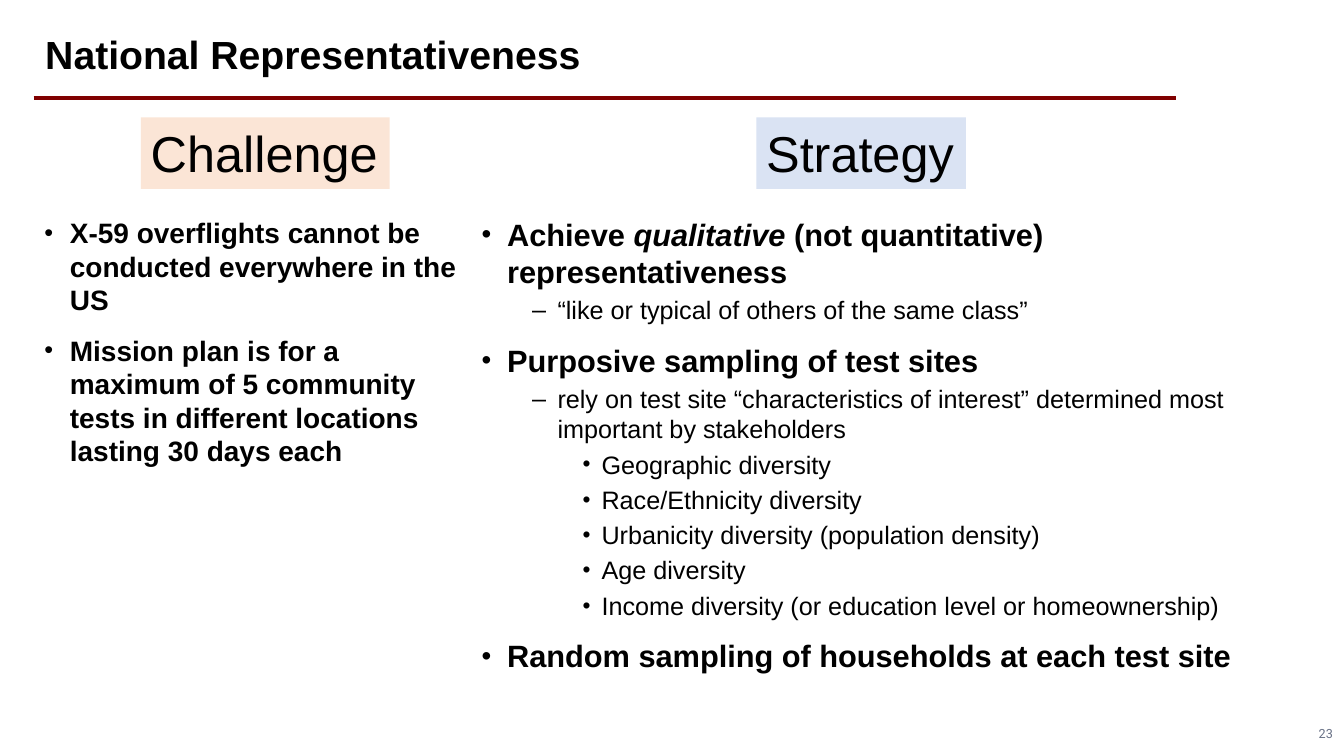
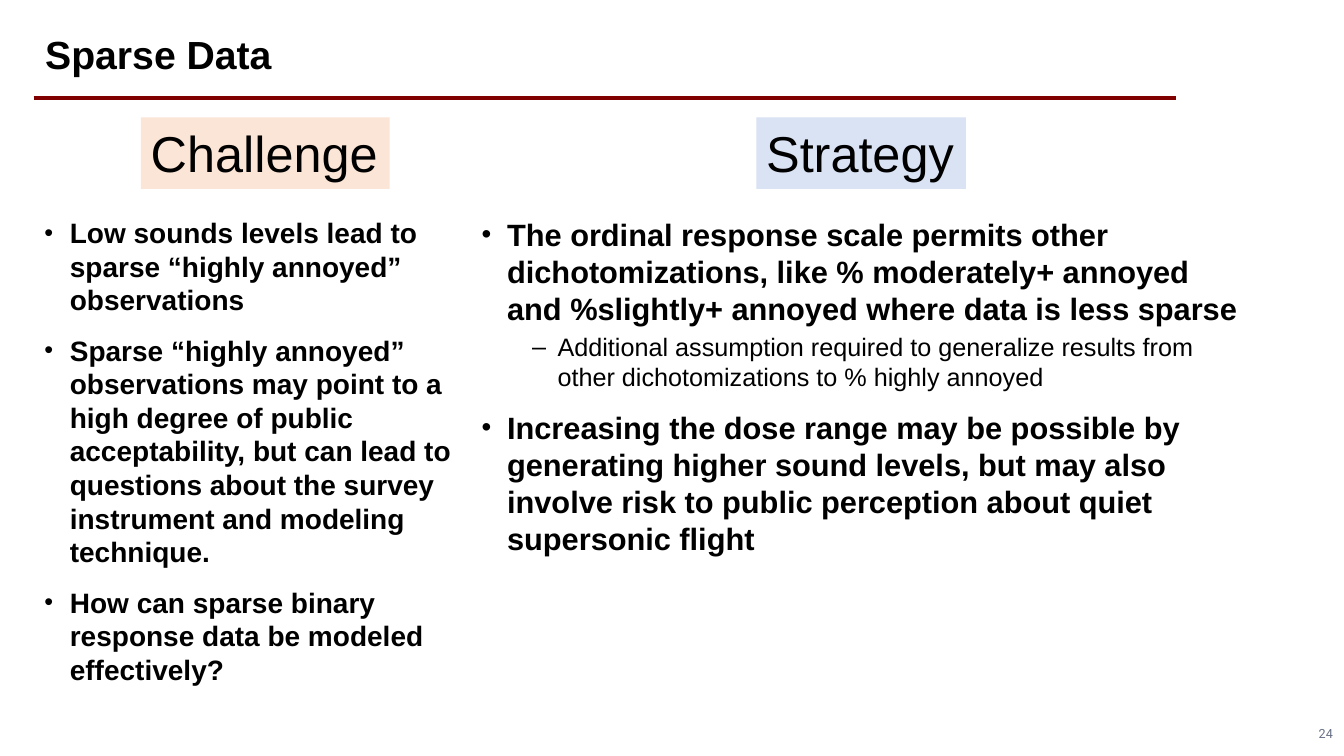
"""Build two challenge-and-strategy slides on survey design."""
from dataclasses import dataclass

from lxml import etree
from pptx import Presentation
from pptx.dml.color import RGBColor
from pptx.enum import shapes, text
from pptx.oxml import ns
from pptx.util import Cm, Pt

COLORS = {
    "text": "000000",
    "rule": "800000",
    "challenge": "FBE5D6",
    "strategy": "DAE3F3",
    "number": "677085",
}
FONT = "Arial"
NUMBER_FONT = "Roboto"
FIRST_NUMBER = 23
LABEL_TOP, LABEL_HEIGHT = 2.96, 1.8
BODY_TOP, BODY_HEIGHT = 5.28, 12.47


@dataclass(frozen=True)
class Level:
    """Paragraph style of one list level, with indents in centimetres."""
    bullet: str
    bullet_percent: int
    margin: float
    hanging: float
    space_before: float
    bold: bool


@dataclass(frozen=True)
class Column:
    """A labelled list column, with lengths in centimetres."""
    label: str
    color: str
    label_left: float
    label_width: float
    body_left: float
    body_width: float
    sizes: tuple[int, ...]


@dataclass(frozen=True)
class Item:
    """A list entry; asterisks enclose italic words."""
    text: str
    level: int = 0


@dataclass(frozen=True)
class Page:
    """Content of one slide."""
    title: str
    challenge: list[Item]
    strategy: list[Item]


LEVELS = (
    Level("•", 90, 0.64, 0.64, 12, True),
    Level("–", 100, 1.91, 0.64, 3.6, False),
    Level("•", 90, 3.02, 0.48, 3.6, False),
)
CHALLENGE = Column("Challenge", "challenge", 3.55, 6.27, 0.84, 11.23, (20,))
STRATEGY = Column("Strategy", "strategy", 19.06, 5.28, 11.86, 19.69, (22, 18, 18))

PAGES = (
    Page(
        "National Representativeness",
        [
            Item("X-59 overflights cannot be conducted everywhere in the US"),
            Item("Mission plan is for a maximum of 5 community tests in different "
                 "locations lasting 30 days each"),
        ],
        [
            Item("Achieve *qualitative *(not quantitative) representativeness"),
            Item("“like or typical of others of the same class”", 1),
            Item("Purposive sampling of test sites"),
            Item("rely on test site “characteristics of interest” determined most "
                 "important by stakeholders", 1),
            Item("Geographic diversity", 2),
            Item("Race/Ethnicity diversity", 2),
            Item("Urbanicity diversity (population density)", 2),
            Item("Age diversity", 2),
            Item("Income diversity (or education level or homeownership)", 2),
            Item("Random sampling of households at each test site"),
        ],
    ),
    Page(
        "Sparse Data",
        [
            Item("Low sounds levels lead to sparse “highly annoyed” observations"),
            Item("Sparse “highly annoyed” observations may point to a high degree of "
                 "public acceptability, but can lead to questions about the survey "
                 "instrument and modeling technique."),
            Item("How can sparse binary response data be modeled effectively?"),
        ],
        [
            Item("The ordinal response scale permits other dichotomizations, like "
                 "% moderately+ annoyed and %slightly+ annoyed where data is less sparse"),
            Item("Additional assumption required to generalize results from other "
                 "dichotomizations to % highly annoyed", 1),
            Item("Increasing the dose range may be possible by generating higher sound "
                 "levels, but may also involve risk to public perception about quiet "
                 "supersonic flight"),
        ],
    ),
)


def rgb(name: str) -> RGBColor:
    """Look up a named colour."""
    return RGBColor.from_string(COLORS[name])


def set_font(paragraph, size: int, bold: bool = False,
             color: str = "text", name: str = FONT) -> None:
    """Set the font that all runs of a paragraph share."""
    font = paragraph.font
    font.name, font.size, font.bold = name, Pt(size), bold
    font.color.rgb = rgb(color)


def place(shape, left: float, top: float, width: float, height: float) -> None:
    """Position a shape by lengths in centimetres."""
    shape.left, shape.top = Cm(left), Cm(top)
    shape.width, shape.height = Cm(width), Cm(height)


def format_frame(frame, anchor: text.MSO_ANCHOR) -> None:
    """Give a text frame the common insets and fixed size."""
    frame.margin_left = frame.margin_right = Cm(0.28)
    frame.margin_top = frame.margin_bottom = Cm(0.15)
    frame.word_wrap = True
    frame.auto_size = text.MSO_AUTO_SIZE.NONE
    frame.vertical_anchor = anchor


def add_bullet(paragraph, level: Level) -> None:
    """Add the indent and bullet of a list level."""
    properties = paragraph._p.get_or_add_pPr()
    properties.set("marL", str(Cm(level.margin)))
    properties.set("indent", str(-Cm(level.hanging)))
    for tag, attribute, value in (
        ("a:buSzPct", "val", str(level.bullet_percent * 1000)),
        ("a:buFont", "typeface", FONT),
        ("a:buChar", "char", level.bullet),
    ):
        etree.SubElement(properties, ns.qn(tag)).set(attribute, value)


def fill_list(shape, items: list[Item], sizes: tuple[int, ...]) -> None:
    """Write list entries into a body placeholder."""
    frame = shape.text_frame
    format_frame(frame, text.MSO_ANCHOR.TOP)
    for index, item in enumerate(items):
        paragraph = frame.add_paragraph() if index else frame.paragraphs[0]
        level = LEVELS[item.level]
        paragraph.level = item.level
        add_bullet(paragraph, level)
        paragraph.alignment = text.PP_ALIGN.LEFT
        paragraph.space_before = Pt(level.space_before if index else 0)
        set_font(paragraph, sizes[item.level], level.bold)
        for position, part in enumerate(item.text.split("*")):
            run = paragraph.add_run()
            run.text = part
            if position % 2:
                run.font.italic = True


def add_column(slide, body, column: Column, items: list[Item]) -> None:
    """Draw a coloured label and the list below it."""
    place(body, column.body_left, BODY_TOP, column.body_width, BODY_HEIGHT)
    fill_list(body, items, column.sizes)
    label = slide.shapes.add_textbox(Cm(column.label_left), Cm(LABEL_TOP),
                                     Cm(column.label_width), Cm(LABEL_HEIGHT))
    label.fill.solid()
    label.fill.fore_color.rgb = rgb(column.color)
    frame = label.text_frame
    frame.word_wrap = False
    frame.auto_size = text.MSO_AUTO_SIZE.SHAPE_TO_FIT_TEXT
    frame.text = column.label
    set_font(frame.paragraphs[0], 36)


def add_title(slide, title: str) -> None:
    """Write the title and draw the rule under it."""
    shape = slide.shapes.title
    place(shape, 0.86, 0.48, 29.21, 1.73)
    frame = shape.text_frame
    format_frame(frame, text.MSO_ANCHOR.MIDDLE)
    frame.text = title
    paragraph = frame.paragraphs[0]
    paragraph.alignment = text.PP_ALIGN.LEFT
    set_font(paragraph, 28, bold=True)
    rule = slide.shapes.add_connector(shapes.MSO_CONNECTOR.STRAIGHT,
                                      Cm(0.85), Cm(2.47), Cm(29.64), Cm(2.47))
    rule.line.color.rgb = rgb("rule")
    rule.line.width = Pt(3)
    etree.SubElement(rule._element.spPr, ns.qn("a:effectLst"))


def add_number(slide, number: int) -> None:
    """Write the slide number in the bottom right corner."""
    box = slide.shapes.add_textbox(Cm(32.35), Cm(17.95), Cm(1.52), Cm(1.09))
    frame = box.text_frame
    format_frame(frame, text.MSO_ANCHOR.MIDDLE)
    frame.text = str(number)
    paragraph = frame.paragraphs[0]
    paragraph.alignment = text.PP_ALIGN.RIGHT
    set_font(paragraph, 9, color="number", name=NUMBER_FONT)


def main() -> None:
    """Build and save the presentation."""
    presentation = Presentation()
    presentation.slide_width, presentation.slide_height = Cm(33.87), Cm(19.05)
    layout = presentation.slide_layouts.get_by_name("Two Content")
    for number, page in enumerate(PAGES, FIRST_NUMBER):
        slide = presentation.slides.add_slide(layout)
        add_title(slide, page.title)
        add_column(slide, slide.placeholders[1], CHALLENGE, page.challenge)
        add_column(slide, slide.placeholders[2], STRATEGY, page.strategy)
        add_number(slide, number)
    presentation.save("out.pptx")


if __name__ == "__main__":
    main()
